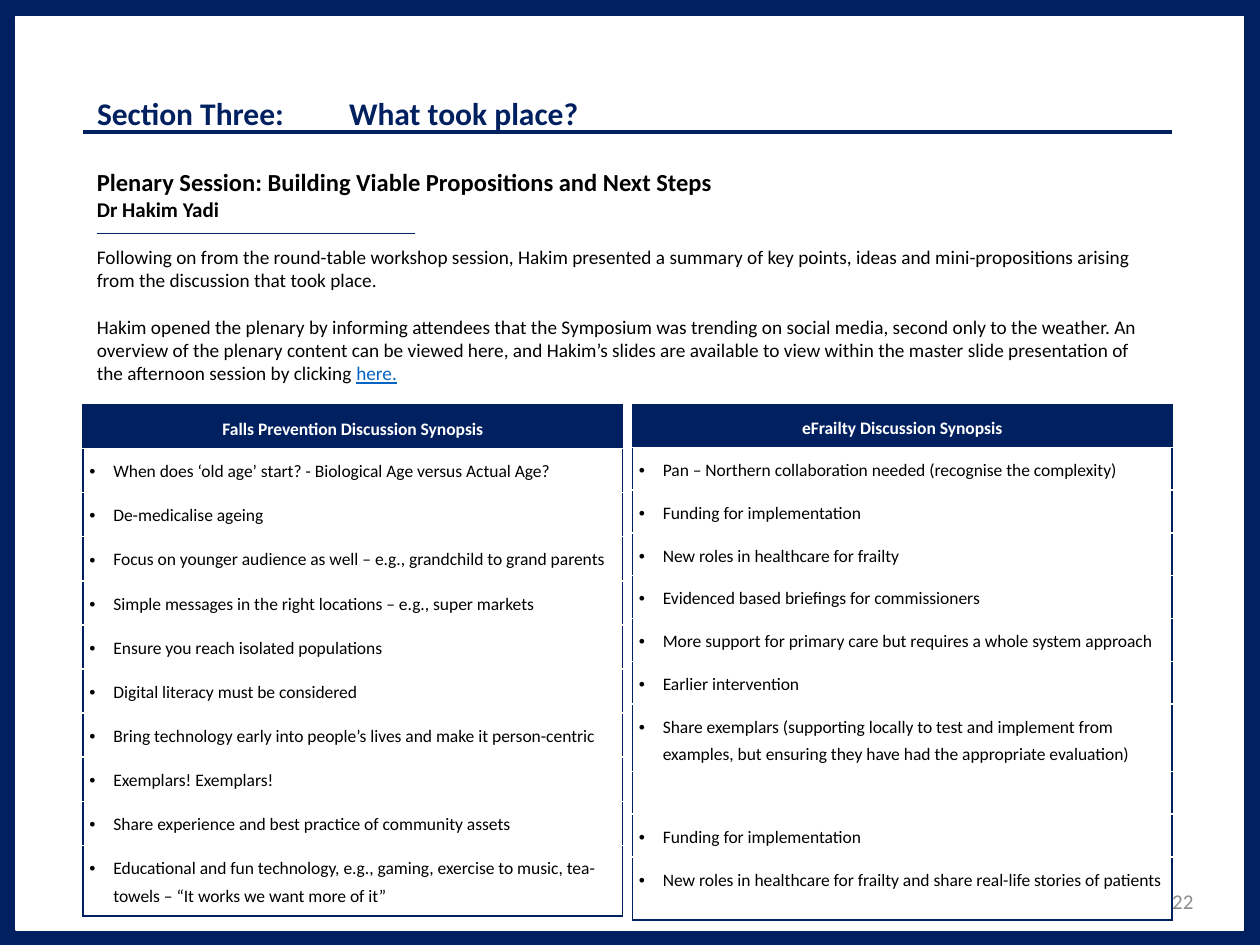
from lxml import etree
from pptx import Presentation
from pptx import util as u
from pptx.dml.color import RGBColor
from pptx.enum import shapes, text
from pptx.oxml import ns

NAVY, WHITE, BLACK, GREY, LINK = "002060", "FFFFFF", "000000", "8C8C8C", "0563C1"
FONT = "Calibri"

FALLS = [
    "Falls Prevention Discussion Synopsis",
    "When does ‘old age’ start? - Biological Age versus Actual Age?",
    "De-medicalise ageing",
    "Focus on younger audience as well – e.g., grandchild to grand parents",
    "Simple messages in the right locations – e.g., super markets",
    "Ensure you reach isolated populations",
    "Digital literacy must be considered",
    "Bring technology early into people’s lives and make it person-centric",
    "Exemplars! Exemplars!",
    "Share experience and best practice of community assets",
    "Educational and fun technology, e.g., gaming, exercise to music, tea-towels – "
    "“It works we want more of it”",
]
FRAILTY = [
    "eFrailty Discussion Synopsis",
    "Pan – Northern collaboration needed (recognise the complexity)",
    "Funding for implementation",
    "New roles in healthcare for frailty",
    "Evidenced based briefings for commissioners",
    "More support for primary care but requires a whole system approach",
    "Earlier intervention",
    "Share exemplars (supporting locally to test and implement from examples, "
    "but ensuring they have had the appropriate evaluation)",
    "",
    "Funding for implementation",
    "New roles in healthcare for frailty and share real-life stories of patients",
]
SUMMARY = (
    "Following on from the round-table workshop session, Hakim presented a summary of key "
    "points, ideas and mini-propositions arising from the discussion that took place."
)
OVERVIEW = (
    "Hakim opened the plenary by informing attendees that the Symposium was trending on "
    "social media, second only to the weather. An overview of the plenary content can be viewed "
    "here, and Hakim’s slides are available to view within the master slide presentation of "
    "the afternoon session by clicking "
)


def rgb(value):
    return RGBColor.from_string(value)


def write(paragraph, words, size=11, color=BLACK, bold=False, underline=None,
          align=None, before=None, after=None, spacing=None):
    """Add a formatted run to a paragraph."""
    run = paragraph.add_run()
    run.text = words
    font = run.font
    font.name, font.size, font.bold, font.underline = FONT, u.Pt(size), bold, underline
    font.color.rgb = rgb(color)
    if align is not None:
        paragraph.alignment = align
    if before is not None:
        paragraph.space_before = u.Pt(before)
    if after is not None:
        paragraph.space_after = u.Pt(after)
    if spacing is not None:
        paragraph.line_spacing = spacing


def bullet(paragraph, indent=0.19):
    props = paragraph._p.get_or_add_pPr()
    props.set("marL", str(u.Inches(indent)))
    props.set("indent", str(-u.Inches(indent)))
    etree.SubElement(props, ns.qn("a:buFont")).set("typeface", "Arial")
    etree.SubElement(props, ns.qn("a:buChar")).set("char", "•")


def border(cell, **colors):
    props = cell._tc.get_or_add_tcPr()
    for side in "LRTB":
        line = etree.SubElement(props, ns.qn("a:ln" + side), w=str(u.Pt(1)))
        fill = etree.SubElement(line, ns.qn("a:solidFill"))
        etree.SubElement(fill, ns.qn("a:srgbClr")).set("val", colors.get(side, NAVY))


class Page:
    """Holds the current slide and draws its elements in the house style."""

    def __init__(self, deck):
        self.slide = deck.slides.add_slide(deck.slide_layouts[5])
        self.slide.background.fill.solid()
        self.slide.background.fill.fore_color.rgb = rgb(NAVY)

    def panel(self, *box):
        sheet = self.slide.shapes.add_shape(
            shapes.MSO_SHAPE.RECTANGLE, *map(u.Inches, box))
        sheet.shadow.inherit = False
        sheet.fill.solid()
        sheet.fill.fore_color.rgb = rgb(WHITE)
        sheet.line.color.rgb = rgb(WHITE)
        sheet.line.width = u.Pt(1)
        self.slide.shapes._spTree.insert(2, sheet._element)

    def title(self, words, *box):
        heading = self.slide.shapes.title
        heading.left, heading.top, heading.width, heading.height = map(u.Inches, box)
        frame = heading.text_frame
        frame.auto_size = text.MSO_AUTO_SIZE.NONE
        frame.vertical_anchor = text.MSO_ANCHOR.BOTTOM
        frame.margin_bottom = 0
        write(frame.paragraphs[0], words, size=18, color=NAVY, bold=True,
              align=text.PP_ALIGN.LEFT, spacing=0.9)

    def rule(self, left, right, y, width):
        rule = self.slide.shapes.add_connector(
            shapes.MSO_CONNECTOR.STRAIGHT, *map(u.Inches, (left, y, right, y)))
        rule.line.color.rgb = rgb(NAVY)
        rule.line.width = u.Pt(width)
        etree.SubElement(rule._element.spPr, ns.qn("a:effectLst"))

    def textbox(self, *box, anchor=text.MSO_ANCHOR.TOP):
        frame = self.slide.shapes.add_textbox(*map(u.Inches, box)).text_frame
        frame.word_wrap = True
        frame.vertical_anchor = anchor
        return frame

    def synopsis(self, left, lines, row_height, last_height):
        top, width = 3.21, 4.28
        table = self.slide.shapes.add_table(
            len(lines), 1, *map(u.Inches, (left, top, width, row_height * len(lines)))).table
        table.first_row = table.horz_banding = False
        last = len(lines) - 1
        for index, words in enumerate(lines):
            table.rows[index].height = u.Inches(last_height if index == last else row_height)
            cell = table.cell(index, 0)
            cell.margin_left = cell.margin_right = u.Inches(0.05)
            cell.margin_top = cell.margin_bottom = u.Inches(0.05)
            paragraph = cell.text_frame.paragraphs[0]
            if index == 0:
                border(cell, B=WHITE)
                cell.fill.solid()
                cell.fill.fore_color.rgb = rgb(NAVY)
                cell.vertical_anchor = text.MSO_ANCHOR.MIDDLE
                write(paragraph, words, size=10, color=WHITE, bold=True,
                      align=text.PP_ALIGN.CENTER, after=12, spacing=1.3)
                continue
            border(cell, T=WHITE, B=NAVY if index == last else WHITE)
            cell.fill.background()
            if words:
                write(paragraph, words, size=10, after=12, spacing=1.3)
                bullet(paragraph)
            else:
                etree.SubElement(paragraph._p, ns.qn("a:endParaRPr")).set("sz", "1000")


def main():
    deck = Presentation()
    deck.slide_width, deck.slide_height = u.Inches(10), u.Inches(7.5)
    page = Page(deck)
    page.panel(0.13, 0.13, 9.74, 7.25)
    page.title("Section Three: \tWhat took place?", 0.67, 0.53, 8.62, 0.52)
    page.rule(0.66, 9.3, 1.05, 2.25)

    session = page.textbox(0.67, 1.28, 8.62, 5.8)
    write(session.paragraphs[0], "Plenary Session: Building Viable Propositions and Next Steps",
          size=14, bold=True)
    write(session.add_paragraph(), "Dr Hakim Yadi", size=12, bold=True)
    write(session.add_paragraph(), SUMMARY, before=13.4)
    overview = session.add_paragraph()
    write(overview, OVERVIEW, before=13.4)
    write(overview, "here.", color=LINK, underline=True)

    number = page.textbox(7.32, 6.95, 2.25, 0.4, anchor=text.MSO_ANCHOR.MIDDLE)
    write(number.paragraphs[0], "22", size=12, color=GREY, align=text.PP_ALIGN.RIGHT)
    page.rule(0.77, 3.29, 1.85, 0.5)
    page.synopsis(0.66, FALLS, 0.35, 0.56)
    page.synopsis(5.02, FRAILTY, 0.34, 0.5)
    deck.save("out.pptx")


if __name__ == "__main__":
    main()
